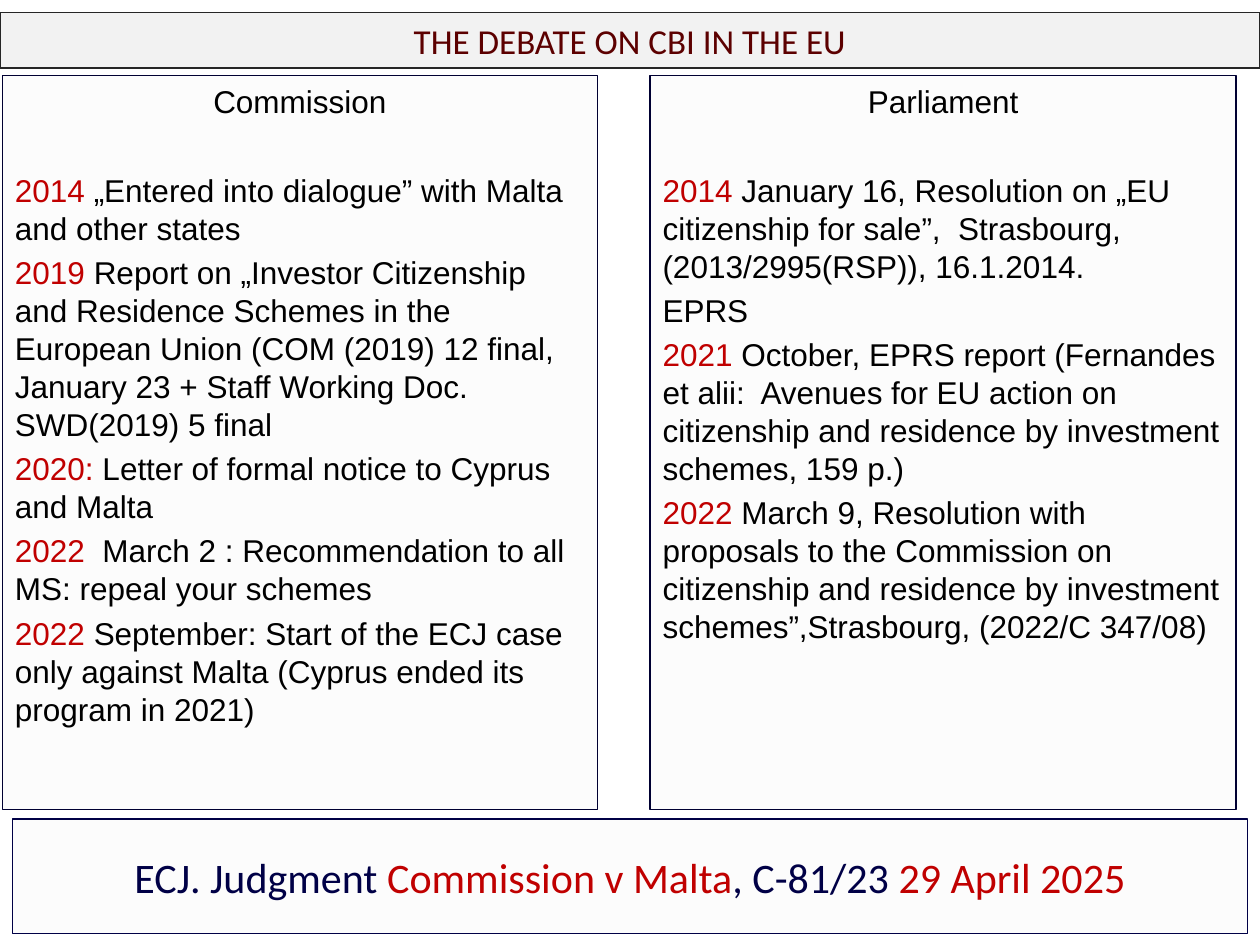
from dataclasses import dataclass

from lxml import etree
from pptx import Presentation
from pptx.dml.color import RGBColor
from pptx.enum.shapes import MSO_SHAPE
from pptx.enum.text import MSO_ANCHOR, PP_ALIGN
from pptx.oxml.ns import qn
from pptx.util import Inches, Pt

RECT = MSO_SHAPE.RECTANGLE
TOP, MIDDLE = MSO_ANCHOR.TOP, MSO_ANCHOR.MIDDLE
LEFT, CENTER = PP_ALIGN.LEFT, PP_ALIGN.CENTER


@dataclass(frozen=True)
class Theme:
    panel: str = "F2F2F2"
    title: str = "5C0000"
    title_line: str = "262626"
    column_line: str = "000032"
    navy: str = "000046"
    red: str = "C00000"
    black: str = "000000"
    title_font: str = "Calibri"
    body_font: str = "Arial"
    title_pt: float = 20
    body_pt: float = 18
    footer_pt: float = 24
    leading_pt: float = 21.7
    entry_gap_pt: float = 3.6
    line_pt: float = 0.75
    panel_opacity: int = 20


@dataclass(frozen=True)
class Box:
    """Position and size as shares of the slide."""
    left: float
    top: float
    width: float
    height: float


@dataclass(frozen=True)
class Entry:
    year: str
    text: str


@dataclass(frozen=True)
class Column:
    box: Box
    heading: str
    entries: tuple[Entry, ...]


THEME = Theme()
SLIDE_W, SLIDE_H = Inches(10), Inches(7.5)
COLUMN_TOP, COLUMN_H = 0.08, 0.777

TITLE_BOX = Box(0, 0.0133, 1, 0.0587)
FOOTER_BOX = Box(0.01, 0.8667, 0.98, 0.1213)
COLUMNS = (
    Column(Box(0.002, COLUMN_TOP, 0.472, COLUMN_H), "Commission", (
        Entry("2014", " „Entered into dialogue” with Malta and other states"),
        Entry("2019", " Report on „Investor Citizenship and Residence Schemes in the "
                      "European Union (COM (2019) 12 final, January 23 + Staff Working Doc. "
                      "SWD(2019) 5 final"),
        Entry("2020: ", "Letter of formal notice to Cyprus and Malta"),
        Entry("2022  ", "March 2 : Recommendation to all MS: repeal your schemes"),
        Entry("2022 ", "September: Start of the ECJ case only against Malta "
                       "(Cyprus ended its program in 2021)"),
    )),
    Column(Box(0.516, COLUMN_TOP, 0.465, COLUMN_H), "Parliament", (
        Entry("2014 ", "January 16, Resolution on „EU citizenship for sale”,  "
                       "Strasbourg, (2013/2995(RSP)), 16.1.2014."),
        Entry("", "EPRS"),
        Entry("2021 ", "October, EPRS report (Fernandes et alii:  Avenues for EU action on "
                       "citizenship and residence by investment schemes, 159 p.)"),
        Entry("2022 ", "March 9, Resolution with proposals to the Commission on citizenship "
                       "and residence by investment schemes”,Strasbourg, (2022/C 347/08)"),
    )),
)
JUDGMENT = (
    ("ECJ. Judgment ", THEME.navy),
    ("Commission v Malta", THEME.red),
    (", C-81/23 ", THEME.navy),
    ("29 April 2025", THEME.red),
)


def add_panel(slide, box: Box, line: str, anchor, opacity: int = 100):
    """Draw an outlined panel and return its text frame."""
    sp = slide.shapes.add_shape(RECT, int(box.left * SLIDE_W), int(box.top * SLIDE_H),
                                int(box.width * SLIDE_W), int(box.height * SLIDE_H))
    sp.shadow.inherit = False
    sp.fill.solid()
    sp.fill.fore_color.rgb = RGBColor.from_string(THEME.panel)
    if opacity < 100:
        color = sp.fill._xPr.find(qn("a:solidFill"))[0]
        etree.SubElement(color, qn("a:alpha"), val=str(opacity * 1000))
    sp.line.color.rgb = RGBColor.from_string(line)
    sp.line.width = Pt(THEME.line_pt)
    tf = sp.text_frame
    tf.word_wrap = True
    tf.vertical_anchor = anchor
    return tf


def write(p, runs, font: str, size: float, align) -> None:
    """Fill a paragraph with (text, colour) runs."""
    p.alignment = align
    p.font.name, p.font.size = font, Pt(size)
    for text, color in runs:
        r = p.add_run()
        r.text = text
        r.font.color.rgb = RGBColor.from_string(color)


def add_column(slide, column: Column) -> None:
    tf = add_panel(slide, column.box, THEME.column_line, TOP, THEME.panel_opacity)
    p = tf.paragraphs[0]
    write(p, [(column.heading, THEME.black)], THEME.body_font, THEME.body_pt, CENTER)
    p.space_before, p.line_spacing = Pt(THEME.entry_gap_pt), Pt(THEME.leading_pt)
    # The first entry stands one line further below the heading
    gap = THEME.leading_pt + 2 * THEME.entry_gap_pt
    for entry in column.entries:
        p = tf.add_paragraph()
        runs = [(entry.year, THEME.red), (entry.text, THEME.black)]
        write(p, [run for run in runs if run[0]], THEME.body_font, THEME.body_pt, LEFT)
        p.space_before, p.line_spacing = Pt(gap), Pt(THEME.leading_pt)
        gap = THEME.entry_gap_pt


def main() -> None:
    prs = Presentation()
    prs.slide_width, prs.slide_height = SLIDE_W, SLIDE_H
    slide = prs.slides.add_slide(prs.slide_layouts[6])

    # Title bar
    tf = add_panel(slide, TITLE_BOX, THEME.title_line, MIDDLE)
    write(tf.paragraphs[0], [("THE DEBATE ON CBI IN THE EU", THEME.title)],
          THEME.title_font, THEME.title_pt, CENTER)

    # Timelines of the two institutions
    for column in COLUMNS:
        add_column(slide, column)

    # Judgment
    tf = add_panel(slide, FOOTER_BOX, THEME.navy, MIDDLE, THEME.panel_opacity)
    write(tf.paragraphs[0], JUDGMENT, THEME.title_font, THEME.footer_pt, CENTER)

    prs.save("out.pptx")


if __name__ == "__main__":
    main()
